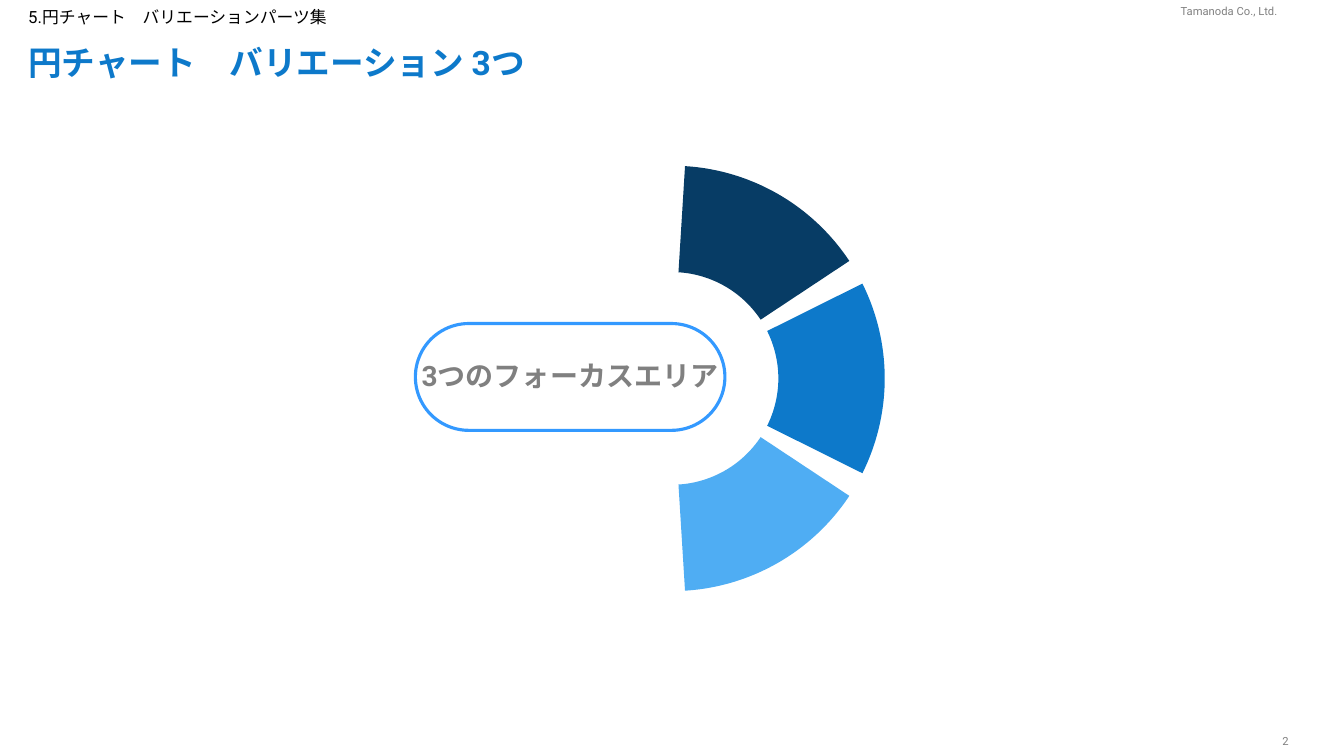
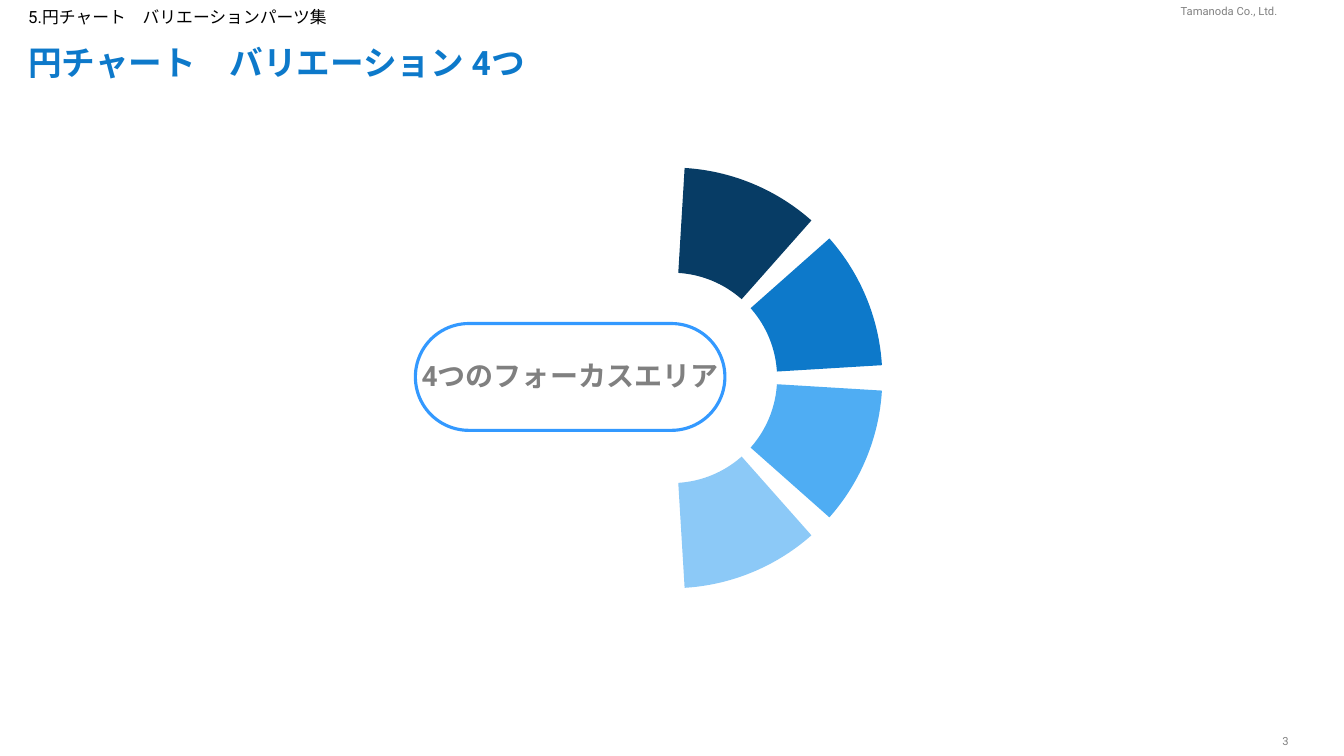
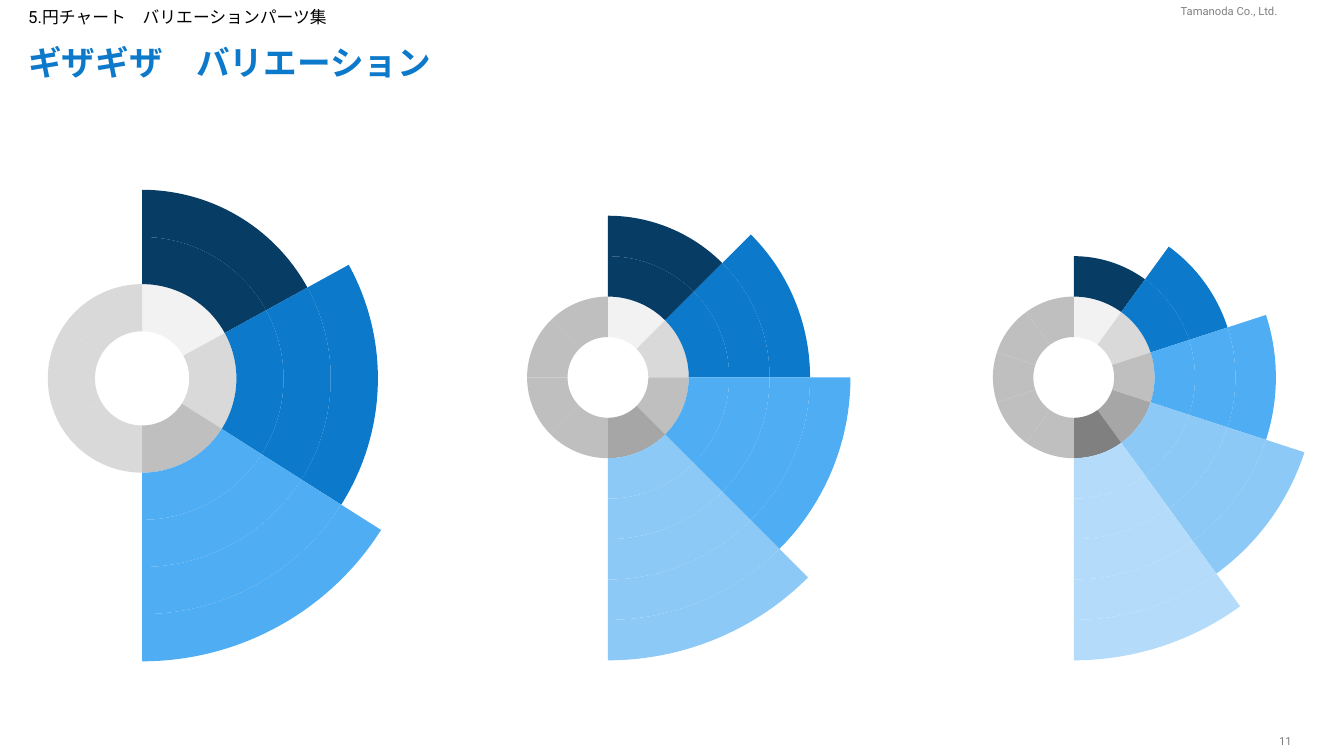
"""Build three slides of half-circle doughnut chart variations."""
from lxml import etree
from pptx import Presentation
from pptx.chart.data import CategoryChartData
from pptx.dml.color import RGBColor
from pptx.enum.chart import XL_CHART_TYPE
from pptx.enum.shapes import MSO_SHAPE
from pptx.enum.text import MSO_ANCHOR, MSO_AUTO_SIZE, PP_ALIGN
from pptx.oxml import parse_xml
from pptx.util import Inches, Pt

DOUGHNUT = XL_CHART_TYPE.DOUGHNUT
ROUNDED = MSO_SHAPE.ROUNDED_RECTANGLE
LEFT, CENTER = PP_ALIGN.LEFT, PP_ALIGN.CENTER
MIDDLE, TOP = MSO_ANCHOR.MIDDLE, MSO_ANCHOR.TOP
CHART_NS = "http://schemas.openxmlformats.org/drawingml/2006/chart"
DRAWING_NS = "http://schemas.openxmlformats.org/drawingml/2006/main"

FONT = "Roboto"
COLORS = {
    "title": "0D79CA", "text": "000000", "muted": "808080",
    "pill": "FFFFFF", "outline": "3399FF",
}
BLUES = ["073C65", "0D79CA", "4FADF3", "8CC9F7", "B4DCFA"]
GREYS = ["F2F2F2", "D9D9D9", "BFBFBF", "A6A6A6", "808080"]

STYLES = {
    "title": {"size": 24, "bold": True, "color": "title", "align": LEFT,
              "anchor": MIDDLE, "wrap": True, "inset": 0.05, "spacing": 0.9},
    "section": {"size": 12, "bold": False, "color": "text", "align": LEFT,
                "anchor": MIDDLE, "wrap": True, "inset": 0.05, "spacing": 0.9},
    "company": {"size": 8, "bold": False, "color": "muted", "align": LEFT,
                "anchor": MIDDLE, "wrap": False, "inset": 0, "spacing": 1.0},
    "number": {"size": 8, "bold": False, "color": "muted", "align": CENTER,
               "anchor": TOP, "wrap": True, "inset": 0, "spacing": 1.0},
    "pill": {"size": 20, "bold": True, "color": "muted", "align": CENTER,
             "anchor": MIDDLE, "wrap": False, "inset": 0.05, "spacing": 0.9},
}
SECTION = "5.円チャート\u3000バリエーションパーツ集".replace("\u3000", "　")
COMPANY = "Tamanoda Co., Ltd."


def write_text(shape, text, style_name):
    """Fill a shape with one paragraph in a named style."""
    style = STYLES[style_name]
    frame = shape.text_frame
    frame.text = text
    paragraph = frame.paragraphs[0]
    inset = Inches(style["inset"])
    frame_format = {
        "auto_size": MSO_AUTO_SIZE.NONE, "word_wrap": style["wrap"],
        "vertical_anchor": style["anchor"], "margin_left": 0,
        "margin_right": 0, "margin_top": inset, "margin_bottom": inset,
    }
    paragraph_format = {
        "alignment": style["align"], "line_spacing": style["spacing"],
        "space_before": Pt(0),
    }
    font_format = {"name": FONT, "size": Pt(style["size"]), "bold": style["bold"]}
    font = paragraph.runs[0].font
    for target, values in ((frame, frame_format), (paragraph, paragraph_format),
                           (font, font_format)):
        for name, value in values.items():
            setattr(target, name, value)
    font.color.rgb = RGBColor.from_string(COLORS[style["color"]])


def add_doughnut(slide, box, values, rings, plot_height):
    """Add a doughnut whose rings are lists of colours, None for an empty slice."""
    chart_data = CategoryChartData()
    chart_data.categories = [str(index + 1) for index in range(len(values))]
    for index in range(len(rings)):
        chart_data.add_series(f"Series {index + 1}", values)
    chart = slide.shapes.add_chart(
        DOUGHNUT, *[Inches(length) for length in box], chart_data).chart
    chart.has_title = False
    chart.has_legend = False
    chart.font.name = FONT
    chart.font.size = Pt(10)
    chart.font.color.rgb = RGBColor.from_string(COLORS["text"])
    chart.plots[0].vary_by_categories = True
    for series, ring in zip(chart.plots[0].series, rings):
        for index, color in enumerate(ring):
            point_format = series.points[index].format
            point_format.line.fill.background()
            if color is None:
                point_format.fill.background()
            else:
                point_format.fill.solid()
                point_format.fill.fore_color.rgb = RGBColor.from_string(color)

    chart_space = chart.element
    plot_area = chart_space.find(f".//{{{CHART_NS}}}plotArea")
    plot_area.find(f".//{{{CHART_NS}}}holeSize").set("val", "25")
    for layout in plot_area.findall(f"{{{CHART_NS}}}layout"):
        plot_area.remove(layout)
    layout = etree.Element(f"{{{CHART_NS}}}layout")
    manual = etree.SubElement(layout, f"{{{CHART_NS}}}manualLayout")
    plot_width = plot_height * box[3] / box[2]
    for name, value in (
            ("layoutTarget", "inner"), ("xMode", "edge"), ("yMode", "edge"),
            ("x", (1 - plot_width) / 2), ("y", (1 - plot_height) / 2),
            ("w", plot_width), ("h", plot_height)):
        etree.SubElement(manual, f"{{{CHART_NS}}}{name}").set("val", str(value))
    plot_area.insert(0, layout)
    chart_space.find(f"{{{CHART_NS}}}chart").addnext(parse_xml(
        f'<c:spPr xmlns:c="{CHART_NS}" xmlns:a="{DRAWING_NS}">'
        "<a:noFill/><a:ln><a:noFill/></a:ln></c:spPr>"))


presentation = Presentation()
presentation.slide_width = Inches(13.33)
presentation.slide_height = Inches(7.5)
title_only = presentation.slide_layouts[5]

slides = []
for title, number in (("円チャート　バリエーション 3つ", "2"),
                      ("円チャート　バリエーション 4つ", "3"),
                      ("ギザギザ　バリエーション", "11")):
    slide = presentation.slides.add_slide(title_only)
    title_shape = slide.shapes.title
    for name, length in (("left", 0.28), ("top", 0.35),
                         ("width", 12.68), ("height", 0.59)):
        setattr(title_shape, name, Inches(length))
    write_text(title_shape, title, "title")
    for text, style_name, box in (
            (SECTION, "section", (0.28, 0.04, 6.38, 0.28)),
            (COMPANY, "company", (11.71, 0.04, 0.93, 0.13)),
            (number, "number", (12.53, 7.29, 0.44, 0.13))):
        text_box = slide.shapes.add_textbox(*[Inches(length) for length in box])
        write_text(text_box, text, style_name)
    slides.append(slide)

for slide, slices, share, box in (
        (slides[0], 3, 15, (3.3, 1.51, 6.73, 4.49)),
        (slides[1], 4, 11, (3.33, 1.53, 6.67, 4.44))):
    half = [1] + [share, 2] * (slices - 1) + [share, 1]
    ring = [None] * (2 * len(half))
    ring[1:2 * slices:2] = BLUES[:slices]
    add_doughnut(slide, box, half * 2, [ring], 0.94)

    pill = slide.shapes.add_shape(
        ROUNDED, Inches(4.12), Inches(3.21), Inches(3.07), Inches(1.06))
    pill.adjustments[0] = 0.5
    pill.shadow.inherit = False
    pill.fill.solid()
    pill.fill.fore_color.rgb = RGBColor.from_string(COLORS["pill"])
    pill.line.color.rgb = RGBColor.from_string(COLORS["outline"])
    pill.line.width = Pt(2.25)
    write_text(pill, f"{slices}つのフォーカスエリア", "pill")

for left, top, half, first_depth, back_grey in (
        (-3.02, 0.8, [17, 17, 16], 2, GREYS[1]),
        (1.6, 0.79, [12] * 4, 2, GREYS[2]),
        (6.22, 0.79, [10] * 5, 1, GREYS[2])):
    slices = len(half)
    rings = [GREYS[:slices] + [back_grey] * slices]
    for depth in range(1, first_depth + slices):
        steps = [BLUES[index] if depth <= first_depth + index else None
                 for index in range(slices)]
        rings.append(steps + [None] * slices)
    add_doughnut(slides[2], (left, top, 8.86, 5.91), half * 2, rings, 0.95)

presentation.save("out.pptx")
